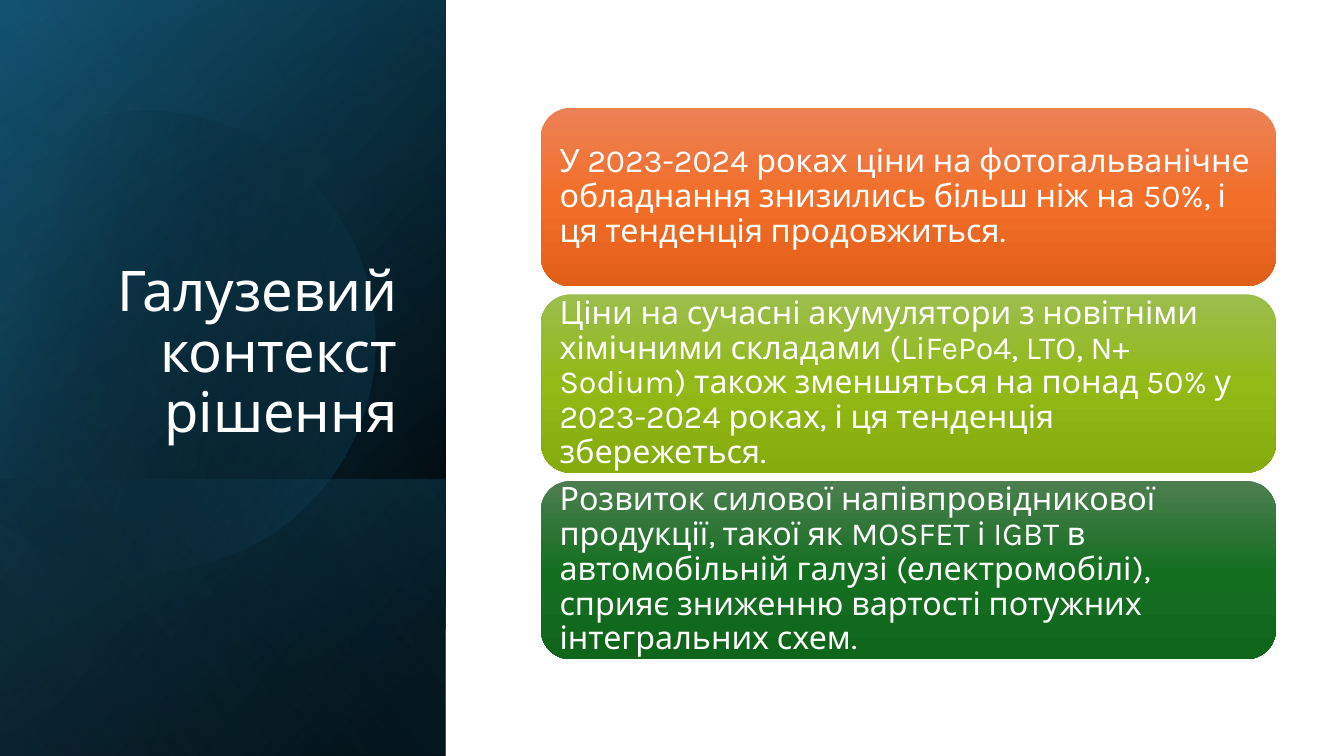
from math import cos, radians, sin

from pptx import Presentation
from pptx.dml.color import RGBColor
from pptx.enum.shapes import MSO_SHAPE
from pptx.enum.text import MSO_ANCHOR, PP_ALIGN
from pptx.oxml import parse_xml
from pptx.oxml.ns import nsdecls, qn
from pptx.util import Inches, Pt

FONT = "Karla"
COLORS = {
    "white": "FFFFFF", "black": "000000",
    "deep_teal": "104862", "teal": "156082", "sky": "46B1E1",
    "orange_light": "ED8257", "orange": "F26E29", "orange_dark": "E25F1A",
    "lime_light": "9CBD4E", "lime": "92B916", "lime_dark": "85AB0D",
    "green_light": "4D7E50", "green": "156F21", "green_dark": "0F661B",
}
TITLE = "Галузевий контекст рішення"
CARDS = [
    ("orange", "У 2023-2024 роках ціни на фотогальванічне обладнання знизились "
               "більш ніж на 50%, і ця тенденція продовжиться."),
    ("lime", "Ціни на сучасні акумулятори з новітніми хімічними складами "
             "(LiFePo4, LTO, N+ Sodium) також зменшяться на понад 50% у "
             "2023-2024 роках, і ця тенденція збережеться."),
    ("green", "Розвиток силової напівпровідникової продукції, такої як MOSFET і IGBT "
              "в автомобільній галузі (електромобілі), сприяє зниженню вартості "
              "потужних інтегральних схем."),
]
DISC_OUTLINE = [
    ("moveTo", [(1.49, 1.1)]),
    ("cubicBezTo", [(2.46, 1.12), (3.35, 1.77), (3.63, 2.75)]),
    ("cubicBezTo", [(3.98, 3.97), (3.28, 5.23), (2.07, 5.58)]),
    ("cubicBezTo", [(1.31, 5.8), (0.53, 5.61), (-0.03, 5.14)]),
    ("lnTo", [(-0.15, 5.03)]),
    ("lnTo", [(-0.15, 1.75)]),
    ("lnTo", [(0, 1.61)]),
    ("cubicBezTo", [(0.23, 1.42), (0.5, 1.28), (0.8, 1.19)]),
    ("cubicBezTo", [(1.03, 1.13), (1.26, 1.1), (1.49, 1.1)]),
]


def style_gradient(shape, stops, angle):
    """Fill with (position %, color name, opacity %) stops; angle runs clockwise."""
    shape.shadow.inherit = False
    shape.line.fill.background()
    shape.fill.gradient()
    stop_xml = "".join(
        f'<a:gs pos="{position * 1000}"><a:srgbClr val="{COLORS[color]}">'
        f'<a:alpha val="{opacity * 1000}"/></a:srgbClr></a:gs>'
        for position, color, opacity in stops)
    gradient = parse_xml(
        f'<a:gradFill {nsdecls("a")} rotWithShape="1"><a:gsLst>{stop_xml}</a:gsLst>'
        f'<a:lin ang="{angle * 60000}" scaled="0"/></a:gradFill>')
    properties = shape._element.spPr
    properties.replace(properties.find(qn("a:gradFill")), gradient)


def write_text(shape, text, size, align=PP_ALIGN.LEFT, anchor=MSO_ANCHOR.MIDDLE,
               inset=0.1, inset_vertical=0.1):
    frame = shape.text_frame
    frame.word_wrap = True
    frame.vertical_anchor = anchor
    frame.margin_left = frame.margin_right = Inches(inset)
    frame.margin_top = frame.margin_bottom = Inches(inset_vertical)
    paragraph = frame.paragraphs[0]
    paragraph.alignment = align
    paragraph.line_spacing = 0.9
    run = paragraph.add_run()
    run.text = text
    run.font.name = FONT
    run.font.size = Pt(size)
    run.font.color.rgb = RGBColor.from_string(COLORS["white"])


def add_turned_panel(slide, left, top, width, height, stops, angle):
    """Cover the given box with a mirrored rectangle turned a quarter."""
    shape = slide.shapes.add_shape(
        MSO_SHAPE.RECTANGLE,
        Inches(left + (width - height) / 2), Inches(top + (height - width) / 2),
        Inches(height), Inches(width))
    shape.rotation = 90
    shape._element.spPr.find(qn("a:xfrm")).set("flipH", "1")
    style_gradient(shape, stops, angle)


def add_disc(slide, left, top, width, height, rotation):
    """Large disc cut off by the left edge; its outline is stated as seen, after rotation."""
    builder = slide.shapes.build_freeform(Inches(left), Inches(top))
    builder.add_line_segments([
        (Inches(left + width), Inches(top)),
        (Inches(left + width), Inches(top + height)),
        (Inches(left), Inches(top + height))])
    disc = builder.convert_to_shape()
    turn = radians(-rotation)

    def point_xml(x, y):
        across, down = x - left - width / 2, y - top - height / 2
        local_x = width / 2 + across * cos(turn) - down * sin(turn)
        local_y = height / 2 + across * sin(turn) + down * cos(turn)
        return f'<a:pt x="{Inches(local_x)}" y="{Inches(local_y)}"/>'

    segments = "".join(
        f'<a:{command}>{"".join(point_xml(*point) for point in points)}</a:{command}>'
        for command, points in DISC_OUTLINE)
    outline = parse_xml(
        f'<a:path {nsdecls("a")} w="{Inches(width)}" h="{Inches(height)}">'
        f'{segments}<a:close/></a:path>')
    path_list = disc._element.spPr.find(qn("a:custGeom")).find(qn("a:pathLst"))
    path_list.replace(path_list[0], outline)
    disc.rotation = rotation
    style_gradient(disc, [(29, "black", 0), (100, "teal", 43)], 30)


def add_title_panel(slide, left, top, width, height):
    box = (left, top, width, height)
    lower_height = 2.74
    lower_box = (left, top + height - lower_height, width, lower_height)
    add_turned_panel(slide, *box, [(8, "black", 100), (100, "deep_teal", 100)], 50)
    add_turned_panel(slide, *box, [(0, "black", 0), (99, "teal", 46)], 30)
    add_turned_panel(slide, *lower_box, [(2, "teal", 29), (100, "black", 30)], 130)
    add_disc(slide, -0.55, 1.06, 4.27, 4.57, 343.9)
    add_turned_panel(slide, *box, [(0, "black", 0), (99, "sky", 11)], 120)
    title = slide.shapes.add_textbox(Inches(left + 0.64), Inches(top + 1.84),
                                     Inches(width - 1.02), Inches(2.62))
    write_text(title, TITLE, 40, align=PP_ALIGN.RIGHT, anchor=MSO_ANCHOR.BOTTOM,
               inset_vertical=0.05)


def add_cards(slide, left, top, width, height, gap=0.08):
    card_height = (height - gap * (len(CARDS) - 1)) / len(CARDS)
    for index, (color, text) in enumerate(CARDS):
        card = slide.shapes.add_shape(
            MSO_SHAPE.ROUNDED_RECTANGLE,
            Inches(left), Inches(top + index * (card_height + gap)),
            Inches(width), Inches(card_height))
        style_gradient(card, [(0, f"{color}_light", 100), (50, color, 100),
                              (100, f"{color}_dark", 100)], 90)
        write_text(card, text, 23)


def main():
    presentation = Presentation()
    presentation.slide_width = Inches(13.33)
    presentation.slide_height = Inches(7.5)
    slide = presentation.slides.add_slide(presentation.slide_layouts[6])
    add_title_panel(slide, 0, 0, 4.42, 7.5)
    add_cards(slide, 5.365, 1.07, 7.29, 5.47)
    presentation.save("out.pptx")


if __name__ == "__main__":
    main()
